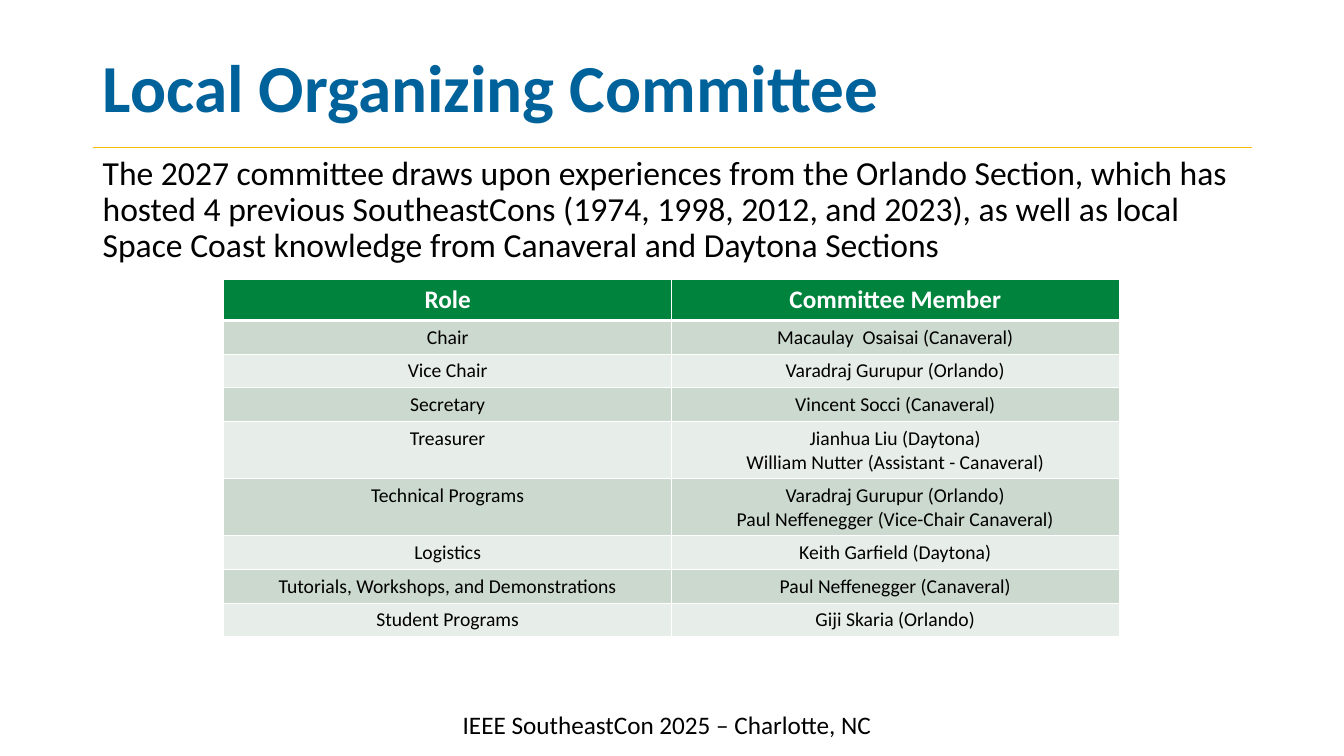
from pptx import Presentation
from pptx.dml.color import RGBColor
from pptx.enum.shapes import MSO_CONNECTOR
from pptx.enum.text import MSO_ANCHOR, MSO_AUTO_SIZE, PP_ALIGN
from pptx.oxml.ns import qn
from pptx.util import Pt
from lxml.etree import SubElement

PX = 9144  # 100 px to the inch
THEME = {
    "face": "Calibri",
    "ink": "000000", "white": "FFFFFF", "title": "00629B", "rule": "F6BE07",
    "head": "00843D", "bands": ("CCD9CE", "E7EDE8"),
    "title_size": 48, "body_size": 24, "head_size": 18, "cell_size": 14,
}
ROWS = [
    ("Role", "Committee Member"),
    ("Chair", "Macaulay  Osaisai (Canaveral)"),
    ("Vice Chair", "Varadraj Gurupur (Orlando)"),
    ("Secretary", "Vincent Socci (Canaveral)"),
    ("Treasurer", "Jianhua Liu (Daytona)\nWilliam Nutter (Assistant - Canaveral)"),
    ("Technical Programs",
     "Varadraj Gurupur (Orlando)\nPaul Neffenegger (Vice-Chair Canaveral)"),
    ("Logistics", "Keith Garfield (Daytona)"),
    ("Tutorials, Workshops, and Demonstrations", "Paul Neffenegger (Canaveral)"),
    ("Student Programs", "Giji Skaria (Orlando)"),
]


def write(frame, text, size, color="ink", bold=False, **format):
    """Fill a text frame; format holds paragraph attributes."""
    frame.text = text
    for para in frame.paragraphs:
        for name, value in format.items():
            setattr(para, name, value)
        for run in para.runs:
            font = {"name": THEME["face"], "size": Pt(THEME[size]), "bold": bold}
            for name, value in font.items():
                setattr(run.font, name, value)
            run.font.color.rgb = RGBColor.from_string(THEME[color])


def edge(cell, side, width):
    line = SubElement(cell._tc.get_or_add_tcPr(), qn("a:ln" + side), w=str(Pt(width)))
    fill = SubElement(line, qn("a:solidFill"))
    SubElement(fill, qn("a:srgbClr"), val=THEME["white"])


deck = Presentation()
deck.slide_width, deck.slide_height = 1333 * PX, 750 * PX
slide = deck.slides.add_slide(deck.slide_layouts[5])
shapes = slide.shapes

# Title and rule
title = shapes.title
place = {"left": 92, "top": 40, "width": 1026, "height": 100}
for name, value in place.items():
    setattr(title, name, value * PX)
frame = title.text_frame
setup = {"vertical_anchor": MSO_ANCHOR.MIDDLE, "word_wrap": True,
         "auto_size": MSO_AUTO_SIZE.NONE}
for name, value in setup.items():
    setattr(frame, name, value)
write(frame, "Local Organizing Committee", "title_size", "title", True,
      alignment=PP_ALIGN.LEFT, line_spacing=0.9)

rule = shapes.add_connector(MSO_CONNECTOR.STRAIGHT, 92 * PX, 146 * PX, 1242 * PX, 146 * PX)
rule.line.color.rgb = RGBColor.from_string(THEME["rule"])
rule.line.width = Pt(0.5)
SubElement(rule._element.spPr, qn("a:effectLst"))

# Introduction and footer
intro = shapes.add_textbox(92 * PX, 150 * PX, 1150 * PX, 540 * PX).text_frame
intro.word_wrap = True
write(intro, "The 2027 committee draws upon experiences from the Orlando Section, "
      "which has hosted 4 previous SoutheastCons (1974, 1998, 2012, and 2023), "
      "as well as local Space Coast knowledge from Canaveral and Daytona Sections",
      "body_size", line_spacing=0.9)

footer = shapes.add_textbox(449 * PX, 699 * PX, 431 * PX, 40 * PX).text_frame
footer.word_wrap = False
footer.auto_size = MSO_AUTO_SIZE.SHAPE_TO_FIT_TEXT
write(footer, "IEEE SoutheastCon 2025 – Charlotte, NC", "head_size")

# Committee table: rows grow to fit two names
grid = shapes.add_table(len(ROWS), 2, 222 * PX, 277 * PX, 888 * PX, 281 * PX).table
for column in grid.columns:
    column.width = 444 * PX
for r, texts in enumerate(ROWS):
    head = r == 0
    grid.rows[r].height = (41 if head else 30) * PX
    look = ("head_size", "white", True) if head else ("cell_size", "ink", False)
    shade = THEME["head"] if head else THEME["bands"][(r - 1) % 2]
    for c, text in enumerate(texts):
        cell = grid.cell(r, c)
        write(cell.text_frame, text, *look, alignment=PP_ALIGN.CENTER)
        for side, width in zip("LRTB", (1, 1, 3 if r == 1 else 1, 3 if head else 1)):
            edge(cell, side, width)
        cell.fill.solid()
        cell.fill.fore_color.rgb = RGBColor.from_string(shade)

deck.save("out.pptx")
